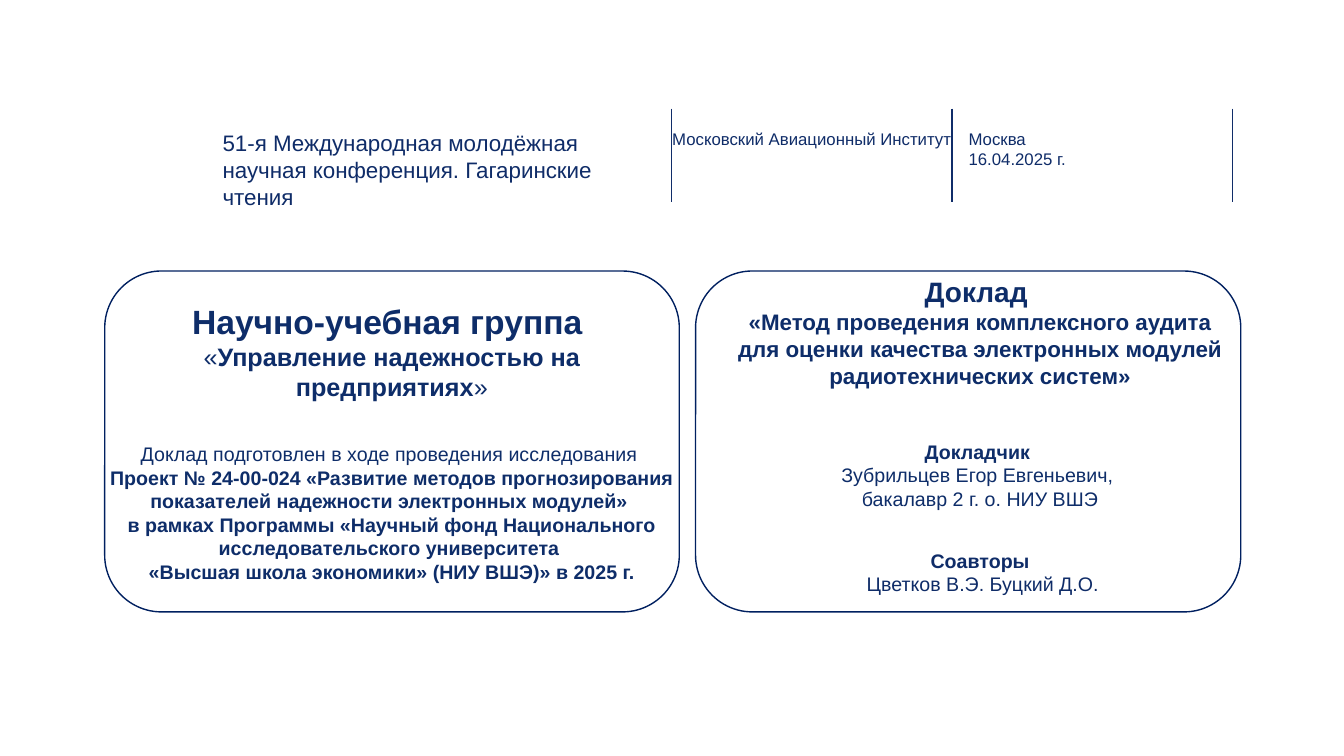
from lxml import etree
from pptx import Presentation
from pptx.dml.color import RGBColor
from pptx.enum.shapes import MSO_CONNECTOR, MSO_SHAPE
from pptx.enum.text import MSO_ANCHOR, MSO_AUTO_SIZE, PP_ALIGN
from pptx.oxml.ns import qn
from pptx.util import Cm, Pt

LEFT, CENTER = PP_ALIGN.LEFT, PP_ALIGN.CENTER
TOP, MIDDLE = MSO_ANCHOR.TOP, MSO_ANCHOR.MIDDLE
STRAIGHT = MSO_CONNECTOR.STRAIGHT
ROUND = MSO_SHAPE.ROUNDED_RECTANGLE
FIXED = MSO_AUTO_SIZE.NONE
NAVY, BLUE, RULE, FRAME = "0E2D69", "0F2C68", "102D69", "002060"


def paint(color, code):
    color.rgb = RGBColor.from_string(code)


def fill_text(frame, paras, color, align=LEFT, anchor=TOP, inset=(0, 0)):
    """Write paragraphs given as (size, space before, [(text, bold), ...])."""
    frame.word_wrap = True
    frame.auto_size = FIXED
    frame.vertical_anchor = anchor
    frame.margin_left = frame.margin_right = Cm(inset[0])
    frame.margin_top = frame.margin_bottom = Cm(inset[1])
    for num, (size, gap, runs) in enumerate(paras):
        para = frame.add_paragraph() if num else frame.paragraphs[0]
        para.alignment = align
        para.line_spacing = 1.0
        para.space_before = Pt(gap)
        para.space_after = Pt(0)
        para.font.name = "Arial"
        para.font.size = Pt(size)
        paint(para.font.color, color)
        for text, bold in runs:
            for row, line in enumerate(text.split("\n")):
                if row:
                    para.add_line_break()
                run = para.add_run()
                run.text = line
                run.font.bold = bold


def add_text(slide, box, paras, color=BLUE, **style):
    shape = slide.shapes.add_textbox(*map(Cm, box))
    fill_text(shape.text_frame, paras, color, **style)


def add_rule(slide, x):
    rule = slide.shapes.add_connector(STRAIGHT, Cm(x), Cm(2.74), Cm(x), Cm(5.08))
    paint(rule.line.color, RULE)
    rule.line.width = Pt(1)
    etree.SubElement(rule.element.spPr, qn("a:effectLst"))


def add_frame(slide, x, width):
    frame = slide.shapes.add_shape(ROUND, Cm(x), Cm(6.83), Cm(width), Cm(8.59))
    frame.shadow.inherit = False
    frame.fill.background()
    paint(frame.line.color, FRAME)
    frame.line.width = Pt(1)


def set_title(slide, box, paras):
    title = slide.shapes.title
    title.left, title.top, title.width, title.height = map(Cm, box)
    fill_text(title.text_frame, paras, NAVY, align=CENTER, anchor=MIDDLE)


def main():
    deck = Presentation()
    deck.slide_width, deck.slide_height = Cm(33.87), Cm(19.05)
    slide = deck.slides.add_slide(deck.slide_layouts[5])

    for x in (16.92, 23.99, 31.06):
        add_rule(slide, x)
    for x, width in ((2.64, 14.48), (17.53, 13.74)):
        add_frame(slide, x, width)

    set_title(slide, (2.74, 7.54, 14.27, 7.19), [
        (24, 0, [("Научно-учебная группа ", True)]),
        (18, 0, [("«", False),
                 ("Управление надежностью на предприятиях", True),
                 ("»", False)]),
        (14, 29, [("Доклад подготовлен в ходе проведения исследования ", False)]),
        (14, 0, [("Проект № 24-00-024 «Развитие методов прогнозирования "
                  "показателей надежности электронных модулей» \n"
                  "в рамках Программы «Научный фонд Национального "
                  "исследовательского университета \n"
                  "«Высшая школа экономики» (НИУ ВШЭ)» в 2025 г.", True)]),
    ])

    add_text(slide, (5.61, 3.25, 10.9, 2.87), [
        (16, 0, [("51-я Международная молодёжная научная конференция. "
                  "Гагаринские чтения", False)])])
    add_text(slide, (16.94, 3.25, 7.2, 1.3), [
        (12, 0, [("Московский Авиационный Институт", False)])])
    add_text(slide, (24.41, 3.25, 6.17, 1.3), [
        (12, 0, [("Москва", False)]),
        (12, 0, [("16.04.2025 г.", False)])])

    add_text(slide, (18.39, 6.93, 12.62, 7.9), [
        (20, 0, [("Доклад ", True)]),
        (16, 0, [("«Метод проведения комплексного аудита для оценки качества "
                  "электронных модулей радиотехнических систем»", True)]),
        (14, 36, [("Докладчик \n", True),
                  ("Зубрильцев Егор Евгеньевич, \n"
                   "бакалавр 2 г. о. НИУ ВШЭ", False)]),
    ], color=NAVY, align=CENTER)
    add_text(slide, (17.83, 13.69, 13.74, 1.45), [
        (14, 0, [("Соавторы", True)]),
        (14, 0, [(" Цветков В.Э. Буцкий Д.О.", False)]),
    ], align=CENTER, inset=(0.25, 0.13))

    deck.save("out.pptx")


if __name__ == "__main__":
    main()
